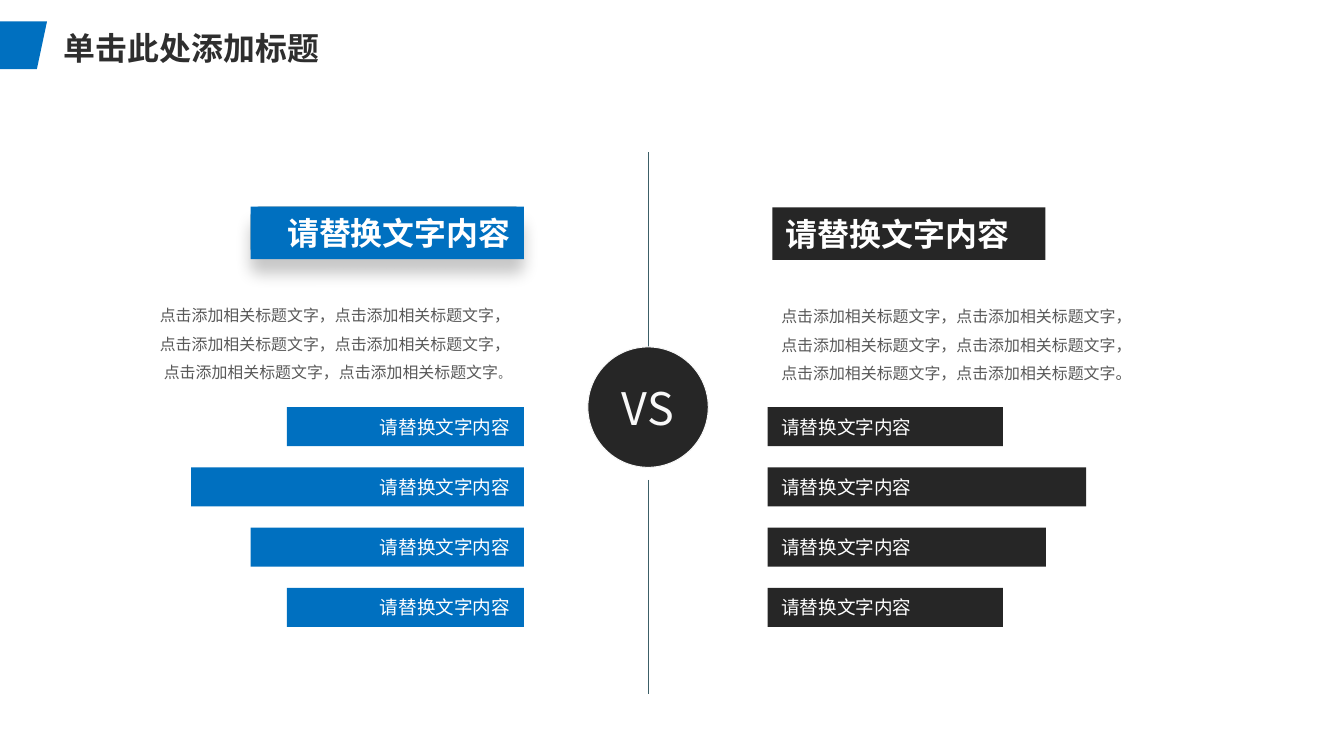
from lxml.etree import SubElement
from pptx import Presentation
from pptx.dml.color import RGBColor
from pptx.enum.shapes import MSO_CONNECTOR, MSO_SHAPE
from pptx.enum.text import MSO_ANCHOR, MSO_AUTO_SIZE, PP_ALIGN
from pptx.oxml.ns import qn
from pptx.util import Cm, Pt

BLUE, DARK, SLATE, WHITE = "0070C0", "262626", "3C5E67", "FFFFFF"
CHINESE_FONT = "Noto Sans CJK SC"
LABEL = "请替换文字内容"
SENTENCE = "点击添加相关标题文字，点击添加相关标题文字"


def colour(value):
    return RGBColor.from_string(value)


def format_span(span, size, name, value, bold=False):
    span.font.size = Pt(size)
    span.font.name = name
    span.font.bold = bold
    span.font.color.rgb = colour(value)
    SubElement(span.font._element, qn("a:ea"), typeface=CHINESE_FONT)


def prepare_frame(frame, wrap=True, anchor=MSO_ANCHOR.MIDDLE):
    frame.word_wrap = wrap
    frame.auto_size = MSO_AUTO_SIZE.NONE
    frame.vertical_anchor = anchor
    frame.margin_left = frame.margin_right = Cm(0.36)
    frame.margin_top = frame.margin_bottom = Cm(0.18)


def place(shape, left, top, width, height):
    shape.left, shape.top = Cm(left), Cm(top)
    shape.width, shape.height = Cm(width), Cm(height)


def paint(shape, fill, outline=None):
    shape.shadow.inherit = False
    shape.fill.solid()
    shape.fill.fore_color.rgb = colour(fill)
    if outline:
        shape.line.color.rgb = colour(outline)
        shape.line.width = Pt(0.75)
    else:
        shape.line.fill.background()


def add_block(page, kind, box, fill, outline=None):
    block = page.shapes.add_shape(kind, *[Cm(length) for length in box])
    paint(block, fill, outline)
    return block


def write_label(block, text, align, size, name, value=WHITE, bold=False, wrap=True):
    prepare_frame(block.text_frame, wrap)
    block.text_frame.text = text
    para = block.text_frame.paragraphs[0]
    para.alignment = align
    format_span(para.runs[0], size, name, value, bold)


def add_soft_shadow(block):
    effects = block._element.spPr.find(qn("a:effectLst"))
    shadow = SubElement(effects, qn("a:outerShdw"), blurRad=str(Pt(12)),
                        dist=str(Pt(12)), dir="5400000", rotWithShape="0")
    shade = SubElement(shadow, qn("a:srgbClr"), val="000000")
    SubElement(shade, qn("a:alpha"), val="22000")


def add_header(page, box):
    left, top, width, height = box
    corners = [(1.25, 0), (0.98, height), (0, height)]
    builder = page.shapes.build_freeform(Cm(left), Cm(top))
    builder.add_line_segments([(Cm(left + x), Cm(top + y)) for x, y in corners])
    paint(builder.convert_to_shape(), BLUE)

    title = page.shapes.title
    place(title, left + 1.45, top + 0.06, width - 1.45, height)
    write_label(title, "单击此处添加标题", PP_ALIGN.LEFT, 24, "Calibri", "2E2E2E", True)
    title.text_frame.margin_left = Cm(0.25)


def add_description(holder, box, align, mark_size):
    place(holder, *box)
    frame = holder.text_frame
    prepare_frame(frame, anchor=MSO_ANCHOR.TOP)
    frame.text = "\n".join([SENTENCE + "，", SENTENCE + "，", SENTENCE])
    mark = frame.paragraphs[-1].add_run()
    mark.text = "。"
    for para in frame.paragraphs:
        properties = para._element.get_or_add_pPr()
        properties.set("marL", "0")
        properties.set("indent", "0")
        SubElement(properties, qn("a:buNone"))
        para.alignment = align
        para.line_spacing = 1.5
        para.space_before = Pt(0)
        for span in para.runs:
            format_span(span, 12, "Arial", "595959")
    mark.font.size = Pt(mark_size)


def add_side(page, box, holder, fill, align, heading_inset, bar_widths, mark_size, shaded):
    left, top, width, height = box

    def aligned(bar_width):
        return left + width - bar_width if align == PP_ALIGN.RIGHT else left

    heading_box = (aligned(7.26) + heading_inset, top, 7.26, 1.4)
    if shaded:
        base_box = (*heading_box[:3], 1.35)
        add_soft_shadow(add_block(page, MSO_SHAPE.ROUNDED_RECTANGLE, base_box, SLATE))
    heading = add_block(page, MSO_SHAPE.RECTANGLE, heading_box, fill)
    write_label(heading, LABEL, align, 24, "Calibri", bold=True)

    add_description(holder, (left, top + 2.2, width, 2.65), align, mark_size)

    bar_height = 1.04
    step = 1.6
    first = top + height - bar_height - step * (len(bar_widths) - 1)
    for index, bar_width in enumerate(bar_widths):
        bar_box = (aligned(bar_width), first + index * step, bar_width, bar_height)
        bar = add_block(page, MSO_SHAPE.RECTANGLE, bar_box, fill)
        write_label(bar, LABEL, align, 14, "Arial")


def add_divider(page, box):
    left, top, width, height = box
    middle = left + width / 2
    for start, end in [(0, 5.71), (8.71, height)]:
        line = page.shapes.add_connector(MSO_CONNECTOR.STRAIGHT, Cm(middle), Cm(top + start),
                                         Cm(middle), Cm(top + end))
        line.line.color.rgb = colour(SLATE)
        line.line.width = Pt(0.75)
        SubElement(line._element.spPr, qn("a:effectLst"))
    circle = add_block(page, MSO_SHAPE.OVAL, (left, top + 5.18, width, width), DARK, "F8F8F8")
    write_label(circle, "VS", PP_ALIGN.CENTER, 33.8, CHINESE_FONT, "F8F8F8", wrap=False)


def main():
    deck = Presentation()
    deck.slide_width, deck.slide_height = Cm(35.71), Cm(20.09)
    page = deck.slides.add_slide(deck.slide_layouts[3])
    left_holder, right_holder = page.placeholders[1], page.placeholders[2]

    add_header(page, (0, 0.57, 32.84, 1.27))
    add_divider(page, (15.62, 4.04, 3.2, 14.4))
    add_side(page, (3.25, 5.49, 10.67, 11.17), left_holder, BLUE, PP_ALIGN.RIGHT,
             0, [6.3, 8.84, 7.26, 6.3], 9, True)
    add_side(page, (20.4, 5.51, 10.67, 11.15), right_holder, DARK, PP_ALIGN.LEFT,
             0.12, [6.25, 8.46, 7.39, 6.25], 12, False)
    deck.save("out.pptx")


if __name__ == "__main__":
    main()
